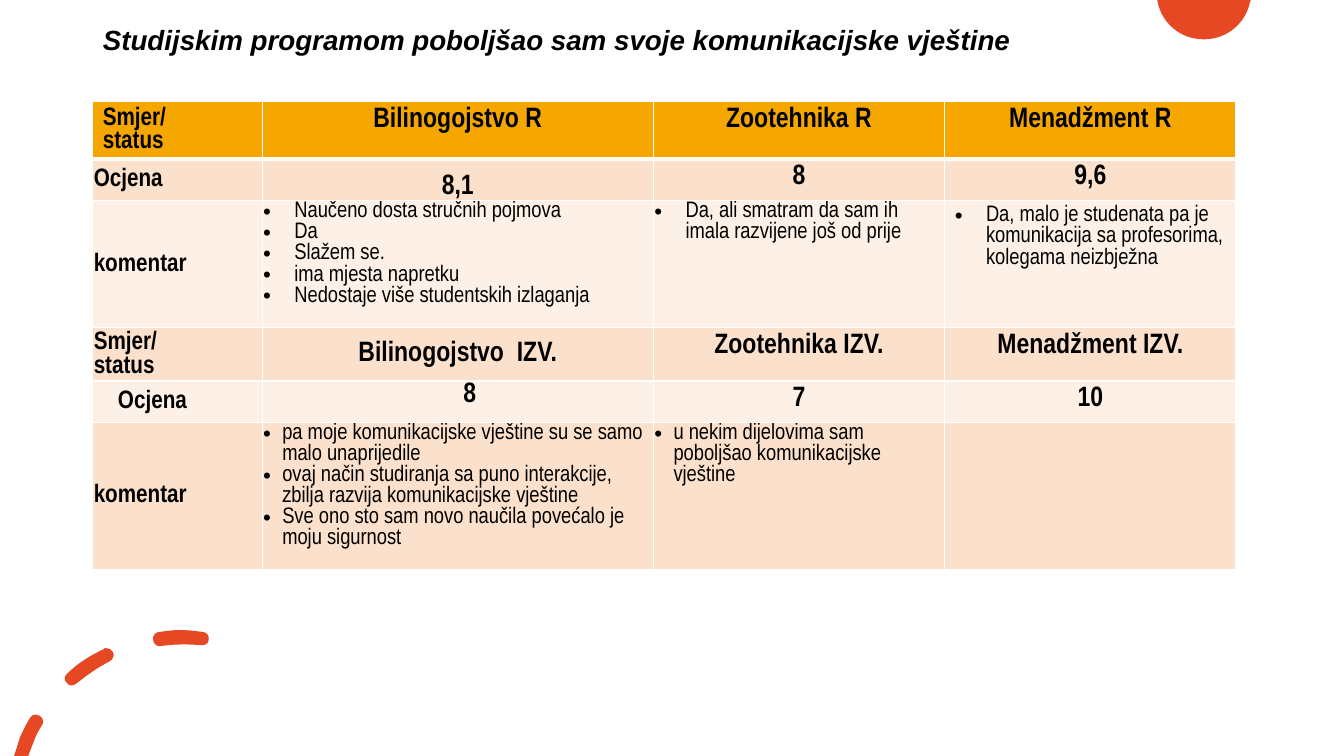
from lxml.etree import SubElement
from pptx import Presentation
from pptx.dml.color import RGBColor
from pptx.enum.text import MSO_ANCHOR, MSO_AUTO_SIZE, PP_ALIGN
from pptx.oxml import parse_xml
from pptx.oxml.ns import nsdecls, qn
from pptx.util import Inches, Pt

ORANGE, AMBER, PEACH, CREAM = "E64823", "F5A700", "FBE1CC", "FDF1E7"
BLACK, WHITE = "000000", "FFFFFF"

TITLE = "Studijskim programom poboljšao sam svoje komunikacijske vještine"
COLUMN_WIDTHS = [1.68, 3.88, 2.89, 2.89]
ROW_HEIGHTS = [0.56, 0.41, 1.26, 0.53, 0.41, 1.46]
ROW_FILLS = [AMBER, PEACH, CREAM, PEACH, CREAM, PEACH]
COMMENT_INDENTS = {2: 0.31, 5: 0.19}
BOTTOM_MARGINS = {3: 0.14}
ROWS = [
    ["Smjer/\nstatus", "Bilinogojstvo R", "Zootehnika R", "Menadžment R"],
    ["Ocjena", "8,1", "8", "9,6"],
    ["komentar",
     "Naučeno dosta stručnih pojmova\nDa\nSlažem se.\nima mjesta napretku\n"
     "Nedostaje više studentskih izlaganja",
     "Da, ali smatram da sam ih imala razvijene još od prije",
     "Da, malo je studenata pa je komunikacija sa profesorima, kolegama neizbježna"],
    ["Smjer/\nstatus", "Bilinogojstvo  IZV.", "Zootehnika IZV.", "Menadžment IZV."],
    ["Ocjena", "8", "7", "10"],
    ["komentar",
     "pa moje komunikacijske vještine su se samo malo unaprijedile\n"
     "ovaj način studiranja sa puno interakcije, zbilja razvija komunikacijske vještine\n"
     "Sve ono sto sam novo naučila povećalo je moju sigurnost",
     "u nekim dijelovima sam poboljšao komunikacijske vještine", ""],
]

# Outlines: a start point, then lines (one point) and Bézier curves (three points).
CORNER_DISC = [[(11.48, 0), (12.41, 0), (12.4, 0.01),
                (12.36, 0.23, 12.17, 0.39, 11.94, 0.39),
                (11.71, 0.39, 11.52, 0.23, 11.48, 0.01)]]
ARC_DASHES = [
    [(0.36, 7.09), (0.34, 7.08, 0.31, 7.1, 0.3, 7.12),
     (0.26, 7.18, 0.23, 7.25, 0.2, 7.31), (0.14, 7.5), (0.28, 7.5), (0.33, 7.37),
     (0.35, 7.31, 0.38, 7.25, 0.42, 7.19), (0.44, 7.16, 0.42, 7.11, 0.39, 7.1),
     (0.38, 7.09, 0.37, 7.09, 0.36, 7.09)],
    [(1.05, 6.43), (1.04, 6.43, 1.03, 6.43, 1.03, 6.44),
     (0.9, 6.5, 0.77, 6.58, 0.67, 6.68), (0.64, 6.7, 0.63, 6.75, 0.66, 6.77),
     (0.67, 6.79, 0.69, 6.8, 0.71, 6.8), (0.73, 6.8, 0.74, 6.79, 0.76, 6.78),
     (0.86, 6.7, 0.97, 6.62, 1.09, 6.56), (1.12, 6.54, 1.14, 6.5, 1.12, 6.47),
     (1.11, 6.44, 1.08, 6.43, 1.05, 6.43)],
    [(1.79, 6.25), (1.72, 6.25, 1.65, 6.26, 1.58, 6.27),
     (1.54, 6.27, 1.51, 6.31, 1.52, 6.35), (1.52, 6.38, 1.55, 6.41, 1.58, 6.41),
     (1.59, 6.41, 1.59, 6.41, 1.59, 6.41),
     (1.73, 6.39, 1.86, 6.39, 1.99, 6.4), (2.03, 6.41, 2.07, 6.38, 2.07, 6.35),
     (2.08, 6.31, 2.05, 6.27, 2.01, 6.27), (1.94, 6.26, 1.86, 6.25, 1.79, 6.25)],
]


def color(hex_string):
    return RGBColor.from_string(hex_string)


def segment_points(segment):
    return [(Inches(x), Inches(y)) for x, y in zip(segment[::2], segment[1::2])]


def bend_curves(shape, outlines):
    """Join each three lines that stand for a curve into one Bézier segment."""
    lines = iter(list(shape._element.iter(qn("a:lnTo"))))
    for outline in outlines:
        for segment in outline[1:]:
            first, *others = [next(lines) for _ in segment[::2]]
            if others:
                curve = parse_xml(f'<a:cubicBezTo {nsdecls("a")}/>')
                first.addprevious(curve)
                for line in (first, *others):
                    curve.append(line[0])
                    line.getparent().remove(line)


def set_borders(cell, widths):
    """Draw white borders; widths are points for left, right, top, bottom."""
    properties = cell._tc.get_or_add_tcPr()
    for index, (side, width) in enumerate(zip("LRTB", widths)):
        properties.insert(index, parse_xml(
            f'<a:ln{side} {nsdecls("a")} w="{Pt(width)}"><a:solidFill>'
            f'<a:srgbClr val="{WHITE}"/></a:solidFill></a:ln{side}>'))


def set_bullet(paragraph, indent):
    properties = paragraph._p.get_or_add_pPr()
    properties.set("marL", str(Inches(indent)))
    properties.set("indent", str(-Inches(indent)))
    SubElement(properties, qn("a:buFont")).set("typeface", "Arial")
    SubElement(properties, qn("a:buChar")).set("char", "•")


class SlideBuilder:
    title_font, table_font = "Arial", "Arial Narrow"

    def __init__(self, presentation):
        self.slide = presentation.slides.add_slide(presentation.slide_layouts[5])

    def format_runs(self, paragraph, font_name, size, bold=True, italic=False):
        for run in paragraph.runs:
            font = run.font
            font.name, font.size, font.bold, font.italic = font_name, Pt(size), bold, italic
            font.color.rgb = color(BLACK)

    def freeform(self, outlines, fill):
        builder = self.slide.shapes.build_freeform(*segment_points(outlines[0][0])[0])
        for index, (start, *segments) in enumerate(outlines):
            if index:
                builder.move_to(*segment_points(start)[0])
            points = [point for segment in segments for point in segment_points(segment)]
            builder.add_line_segments(points, close=True)
        shape = builder.convert_to_shape()
        bend_curves(shape, outlines)
        shape.shadow.inherit = False
        shape.fill.solid()
        shape.fill.fore_color.rgb = color(fill)
        shape.line.fill.background()

    def title(self, text, left, top, width, height):
        shape = self.slide.shapes.title
        shape.left, shape.top = Inches(left), Inches(top)
        shape.width, shape.height = Inches(width), Inches(height)
        frame = shape.text_frame
        frame.text = text
        frame.word_wrap = True
        frame.auto_size = MSO_AUTO_SIZE.NONE
        frame.vertical_anchor = MSO_ANCHOR.TOP
        frame.margin_top = 0
        paragraph = frame.paragraphs[0]
        paragraph.alignment = PP_ALIGN.LEFT
        paragraph.line_spacing = 0.9
        self.format_runs(paragraph, self.title_font, 19.8, italic=True)

    def table(self, rows, left, top):
        table = self.slide.shapes.add_table(
            len(rows), len(COLUMN_WIDTHS), Inches(left), Inches(top),
            Inches(sum(COLUMN_WIDTHS)), Inches(sum(ROW_HEIGHTS))).table
        table.horz_banding = False
        for column, width in zip(table.columns, COLUMN_WIDTHS):
            column.width = Inches(width)
        for row_index, texts in enumerate(rows):
            table.rows[row_index].height = Inches(ROW_HEIGHTS[row_index])
            for column_index, text in enumerate(texts):
                self.cell(table.cell(row_index, column_index), text, row_index, column_index)

    def cell(self, cell, text, row, column):
        is_comment = row in COMMENT_INDENTS and column > 0
        cell.fill.solid()
        cell.fill.fore_color.rgb = color(ROW_FILLS[row])
        set_borders(cell, (1, 1, 3 if row == 1 else 1, 3 if row == 0 else 1))
        if row > 0 and (column < 2 or is_comment and column == 2):
            cell.margin_left = Inches(0.25 if row == 4 else 0.01)
            cell.margin_right = cell.margin_top = Inches(0.01)
            cell.margin_bottom = 0
        if row > 0 and column == 0:
            cell.vertical_anchor = MSO_ANCHOR.MIDDLE
        elif row in (1, 3) and column == 1:
            cell.vertical_anchor = MSO_ANCHOR.BOTTOM
            cell.margin_bottom = Inches(BOTTOM_MARGINS.get(row, 0))
        if not text:
            return
        cell.text_frame.text = text
        size = 18 if column == 0 else 16 if is_comment else 20
        for paragraph in cell.text_frame.paragraphs:
            if is_comment:
                set_bullet(paragraph, COMMENT_INDENTS[row])
            elif column > 0:
                paragraph.alignment = PP_ALIGN.CENTER
            self.format_runs(paragraph, self.table_font, size, bold=not is_comment)


def main():
    presentation = Presentation()
    presentation.slide_width, presentation.slide_height = Inches(13.33), Inches(7.5)
    builder = SlideBuilder(presentation)
    builder.freeform(CORNER_DISC, ORANGE)
    builder.freeform(ARC_DASHES, ORANGE)
    builder.table(ROWS, 0.92, 1.01)
    builder.title(TITLE, 0.92, 0.26, 11.5, 0.59)
    presentation.save("out.pptx")


if __name__ == "__main__":
    main()
